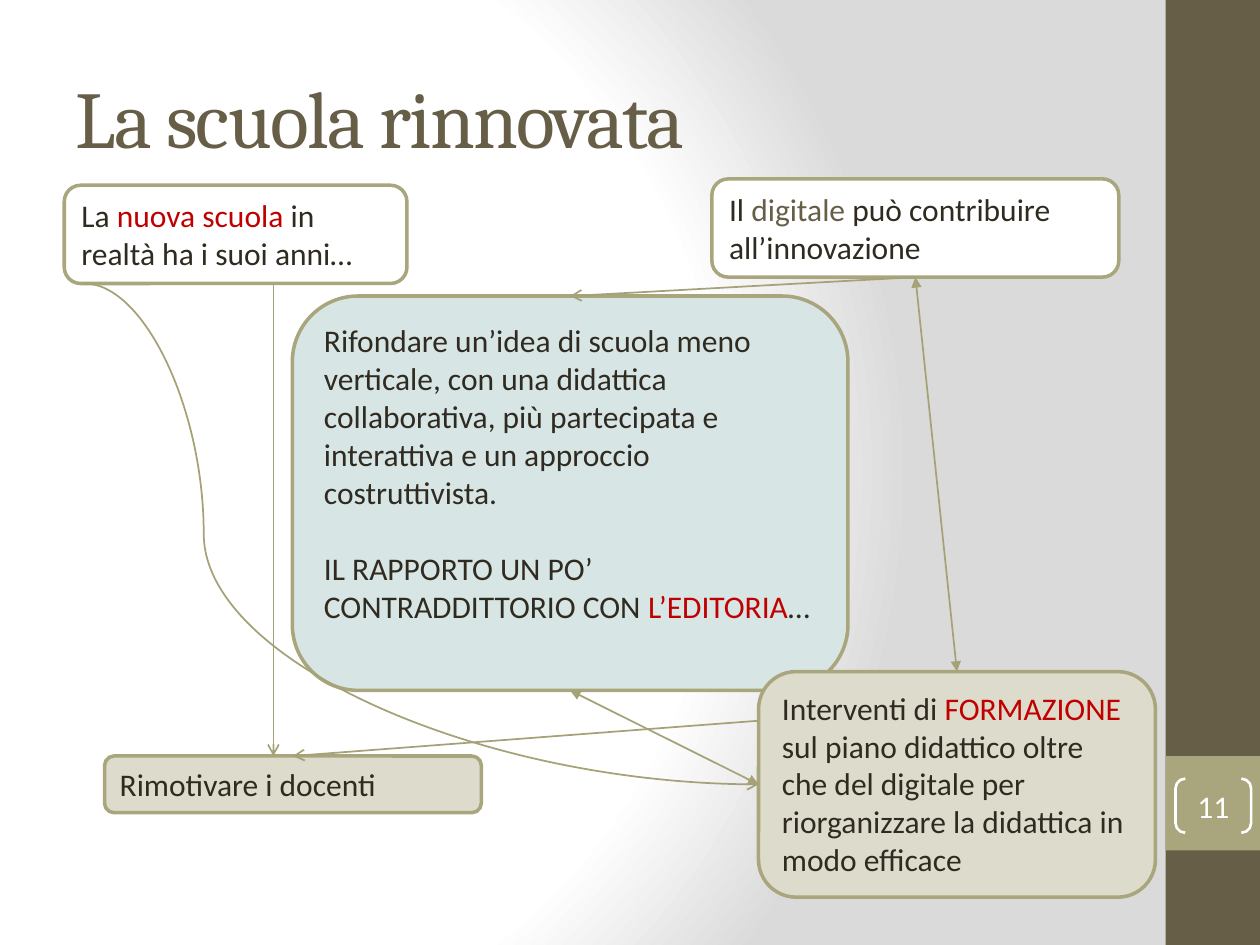
from lxml import etree
from pptx import Presentation
from pptx.dml.color import RGBColor
from pptx.enum.shapes import MSO_CONNECTOR as Link, MSO_SHAPE as Shape
from pptx.enum.text import MSO_ANCHOR as Anchor, MSO_AUTO_SIZE as Fit, PP_ALIGN as Align
from pptx.oxml import parse_xml
from pptx.oxml.ns import nsdecls, qn
from pptx.util import Inches, Pt

BROWN = RGBColor(0x67, 0x5E, 0x47)
OLIVE = RGBColor(0xA9, 0xA5, 0x7C)
ARROW = RGBColor(0xA6, 0xA2, 0x78)
INK = RGBColor(0x2F, 0x2B, 0x20)
RED = RGBColor(0xC0, 0x00, 0x00)
WHITE = RGBColor(0xFF, 0xFF, 0xFF)
AQUA = RGBColor(0xD7, 0xE5, 0xE5)
SAND = RGBColor(0xDD, 0xDB, 0xCB)
GREY = RGBColor(0xDA, 0xDA, 0xDA)
TOP, LEFT, BOTTOM = 0, 1, 2


class Board:
    """Style and current page; lengths are percentages of the page's width and height."""
    heading_font, body_font, body_size = "Cambria", "Calibri", 18

    def __init__(self, deck):
        self.width, self.height = deck.slide_width, deck.slide_height
        self.page = deck.slides.add_slide(deck.slide_layouts[5])

    def point(self, x, y):
        return round(self.width * x / 100), round(self.height * y / 100)

    def frame(self, left, top, width, height):
        return *self.point(left, top), *self.point(width, height)

    def background(self, *stops):
        """Radial gradient around the left part of the page, from (position, colour) stops."""
        self.page.background.fill.solid()
        solid = self.page.element.find(".//" + qn("p:bgPr")).find(qn("a:solidFill"))
        marks = "".join(f'<a:gs pos="{place * 1000}"><a:srgbClr val="{colour}"/></a:gs>'
                        for place, colour in stops)
        solid.getparent().replace(solid, parse_xml(
            f'<a:gradFill {nsdecls("a")} rotWithShape="1"><a:gsLst>{marks}</a:gsLst>'
            '<a:path path="circle"><a:fillToRect l="20000" t="50000" r="100000" b="50000"/>'
            '</a:path></a:gradFill>'))

    def style(self, span, colour, size=body_size, font=body_font):
        span.font.name, span.font.size = font, Pt(size)
        span.font.color.rgb = colour

    def title(self, text, *place):
        box = self.page.shapes.title
        box.left, box.top, box.width, box.height = self.frame(*place)
        frame = box.text_frame
        frame.text = text
        frame.auto_size, frame.vertical_anchor = Fit.NONE, Anchor.MIDDLE
        para = frame.paragraphs[0]
        para.alignment = Align.LEFT
        self.style(para.runs[0], BROWN, 46, self.heading_font)
        para.runs[0].font._element.set("spc", "-100")

    def shape(self, kind, place, fill=None, line=None, weight=2):
        box = self.page.shapes.add_shape(kind, *self.frame(*place))
        box.shadow.inherit = False
        if fill is None:
            box.fill.background()
        else:
            box.fill.solid()
            box.fill.fore_color.rgb = fill
        if line is None:
            box.line.fill.background()
        else:
            box.line.color.rgb, box.line.width = line, Pt(weight)
        return box

    def number(self, text, *place):
        box = self.shape(Shape.DOUBLE_BRACKET, place, line=WHITE, weight=1.5)
        box.adjustments[0] = 0.18
        frame = box.text_frame
        frame.margin_left = frame.margin_right = frame.margin_top = frame.margin_bottom = 0
        frame.vertical_anchor = Anchor.MIDDLE
        frame.text = text
        frame.paragraphs[0].alignment = Align.CENTER
        self.style(frame.paragraphs[0].runs[0], WHITE)

    def card(self, place, fill, *paragraphs):
        """Rounded box; each paragraph is a list of (text, colour) spans."""
        box = self.shape(Shape.ROUNDED_RECTANGLE, place, fill, OLIVE)
        frame = box.text_frame
        frame.word_wrap, frame.auto_size = True, Fit.SHAPE_TO_FIT_TEXT
        frame.vertical_anchor = Anchor.TOP
        for index, spans in enumerate(paragraphs):
            para = frame.add_paragraph() if index else frame.paragraphs[0]
            para.alignment = Align.LEFT
            para.space_before = Pt(22 if index else 0)
            for text, colour in spans:
                span = para.add_run()
                span.text = text
                self.style(span, colour)
        return box

    def arrow(self, start, end, both=False, kind=Link.STRAIGHT):
        """Each end is an (x, y) point or a (box, side) pair to join."""
        ends = [(0, 0) if hasattr(spot[0], "text_frame") else self.point(*spot)
                for spot in (start, end)]
        line = self.page.shapes.add_connector(kind, *ends[0], *ends[1])
        for spot, join in ((start, line.begin_connect), (end, line.end_connect)):
            if hasattr(spot[0], "text_frame"):
                join(*spot)
        line.line.color.rgb, line.line.width = ARROW, Pt(1)
        props = line.element.spPr
        for tag in ("headEnd", "tailEnd") if both else ("tailEnd",):
            etree.SubElement(props.find(qn("a:ln")), qn("a:" + tag),
                             type="triangle" if both else "arrow")
        etree.SubElement(props, qn("a:effectLst"))
        return line

    def curve(self, start, end, bend):
        line = self.arrow(start, end, kind=Link.CURVE)
        guides = line.element.spPr.find(qn("a:prstGeom")).get_or_add_avLst()
        etree.SubElement(guides, qn("a:gd"), name="adj1", fmla=f"val {round(bend * 1000)}")


def main():
    deck = Presentation()
    deck.slide_width, deck.slide_height = Inches(10), Inches(7.5)
    board = Board(deck)
    board.background((0, WHITE), (75, WHITE), (100, GREY))
    board.shape(Shape.RECTANGLE, (92.5, 0, 7.5, 100), BROWN)
    board.shape(Shape.RECTANGLE, (92.5, 80, 7.5, 10), OLIVE)
    board.title("La scuola rinnovata", 5, 4, 83.3, 16.67)
    board.number("11", 93.3, 82.4, 6, 5.73)

    board.card((5.1, 19.6, 27.2, 10.4), WHITE, [
        ("La ", INK), ("nuova scuola ", RED), ("in realtà ha i suoi anni…", INK)])
    digital = board.card((56.5, 18.93, 32.3, 10.4), WHITE, [
        ("Il ", INK), ("digitale ", BROWN), ("può contribuire all’innovazione", INK)])
    idea = board.card((23.2, 31.33, 44.1, 41.73), AQUA, [
        ("Rifondare un’idea di scuola meno verticale, con una didattica collaborativa, "
         "più partecipata e interattiva e un approccio costruttivista.", INK)], [
        ("IL RAPPORTO UN PO’ CONTRADDITTORIO CON ", INK), ("L’EDITORIA", RED), ("…", INK)])
    teachers = board.card((8.3, 80, 29.9, 6), SAND, [("Rimotivare i docenti", INK)])
    training = board.card((60.2, 71.07, 31.5, 23.87), SAND, [
        ("Interventi di ", INK), ("FORMAZIONE", RED),
        (" sul piano didattico oltre che del digitale per riorganizzare la didattica "
         "in modo efficace", INK)])

    board.arrow((21.7, 30), (21.7, 80))
    board.arrow((digital, BOTTOM), (idea, TOP))
    board.arrow((60.2, 76.27), (teachers, TOP))
    board.arrow((idea, BOTTOM), (training, LEFT), both=True)
    board.arrow((digital, BOTTOM), (training, TOP), both=True)
    board.curve((6.7, 30), (training, LEFT), 17.7)
    deck.save("out.pptx")


if __name__ == "__main__":
    main()
